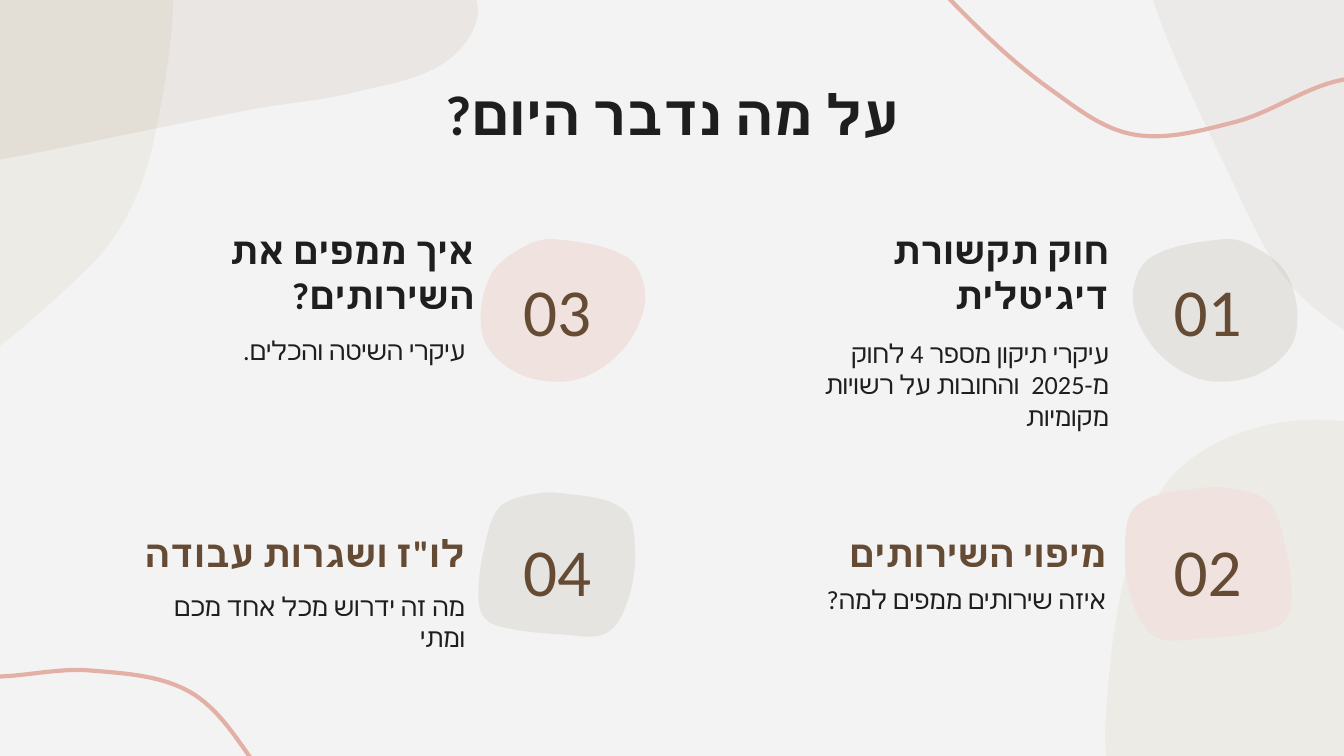
import math
from dataclasses import dataclass
from typing import Optional

from lxml import etree
from pptx import Presentation
from pptx import util as u
from pptx.dml import color
from pptx.enum import text
from pptx.oxml import ns

Point = tuple[float, float]
CM_PER_INCH = 2.54


@dataclass(frozen=True)
class Theme:
    background: str = "F3F3F3"
    ink: str = "1E1E1E"
    brown: str = "664B34"
    blush: str = "EFE2DF"
    stone: str = "E5E4E0"
    sand: str = "E7E2D6"
    clay: str = "AC9078"
    olive: str = "887C62"
    rose: str = "E2B0A6"
    font: str = "Calibri"
    title_size: int = 30
    number_size: int = 36
    heading_size: int = 20
    detail_size: int = 14
    line_width: float = 2.25


THEME = Theme()


@dataclass(frozen=True)
class Curve:
    anchors: list[Point]
    fill: Optional[str] = None
    opacity: int = 100


@dataclass(frozen=True)
class Label:
    wording: str
    left: float
    top: float
    width: float
    height: float
    size: int
    colour: str = THEME.ink
    bold: bool = False
    rtl: bool = True
    align: text.PP_ALIGN = text.PP_ALIGN.RIGHT
    anchor: text.MSO_ANCHOR = text.MSO_ANCHOR.TOP


@dataclass(frozen=True)
class Row:
    number_top: float
    heading_top: float
    heading_colour: str


@dataclass(frozen=True)
class Topic:
    row: Row
    number_left: float
    heading: str
    heading_left: float
    detail: str
    detail_left: float
    detail_top: float


def placed(anchors: list[Point], origin: Point, target: Point,
           turn: float = 0, mirror: bool = False, scale: float = 1) -> list[Point]:
    cosine, sine = math.cos(math.radians(turn)), math.sin(math.radians(turn))
    result = []
    for x, y in anchors:
        across = (x - origin[0]) * scale * (-1 if mirror else 1)
        down = (y - origin[1]) * scale
        result.append((target[0] + across * cosine - down * sine,
                       target[1] + across * sine + down * cosine))
    return result


def smooth_controls(anchors: list[Point], closed: bool) -> list[Point]:
    count = len(anchors)

    def neighbour(index: int) -> Point:
        return anchors[index % count if closed else max(0, min(index, count - 1))]

    def handle(index: int, reach: float) -> Point:
        (x, y), before, after = neighbour(index), neighbour(index - 1), neighbour(index + 1)
        span = math.dist(before, after)
        return (x + reach * (after[0] - before[0]) / span,
                y + reach * (after[1] - before[1]) / span)

    controls = []
    for index in range(count if closed else count - 1):
        end = neighbour(index + 1)
        reach = math.dist(neighbour(index), end) / 3
        controls += [handle(index, reach), handle(index + 1, -reach), end]
    return controls


CORNER_BLOB = [(8.64, 3.65), (9.64, 3.13), (11.11, 3.42), (13.58, 4.37), (15.32, 5.86),
               (15.78, 7.28), (14.33, 6.99), (13.41, 7.26), (10.89, 8.21), (9.84, 8.07),
               (8.44, 6.36), (8.23, 5.3)]
TOP_BAND = [(2.43, -0.8), (3.07, -0.74), (3.55, 0.02), (3.33, 0.45), (2.62, 0.69), (1.9, 0.81),
            (-0.72, 1.31), (-0.95, 1.23), (-1.31, 0.43), (-0.32, -0.2), (1.55, -0.6)]
SIDE_BLOB = [(10.96, -3.77), (13.79, -3.8), (14.74, -2.32), (15.52, -0.37), (14.61, 1.4),
             (12.34, 2.23), (10.5, 2.62), (9.73, 2.25), (9.25, 1.52), (8.42, -0.59),
             (8.51, -2.46)]
WAVE = [(6.49, -0.66), (7.17, 0.1), (7.81, 0.66), (8.43, 1), (9.18, 0.91), (10.1, 0.58),
        (12.44, 0.75), (14.45, 1.13), (15.11, -0.37)]
PEBBLE = [(9.1, 1.78), (9.32, 1.83), (9.58, 2.05), (9.64, 2.49), (9.41, 2.76), (9.04, 2.84),
          (8.74, 2.73), (8.51, 2.48), (8.43, 2.17), (8.57, 1.91)]
CUSHION = [(8.95, 3.63), (9.24, 3.65), (9.45, 3.75), (9.56, 4.05), (9.61, 4.43), (9.56, 4.62),
           (9.38, 4.7), (8.94, 4.75), (8.6, 4.74), (8.43, 4.49), (8.37, 4.09), (8.46, 3.76)]

CURVES = [
    Curve(CORNER_BLOB, THEME.sand, 46),
    Curve(placed(CORNER_BLOB, (11.87, 6.13), (-2.58, 0.84), turn=15.7, mirror=True),
          THEME.sand, 46),
    Curve(TOP_BAND, THEME.clay, 13),
    Curve(SIDE_BLOB, THEME.olive, 7),
    Curve(placed(WAVE, (10.9, 0.5), (-1.09, 4.82), turn=-161.1)),
    Curve(WAVE),
    Curve(placed(PEBBLE, (9.1, 1.78), (4.13, 1.78), mirror=True), THEME.blush),
    Curve(PEBBLE, THEME.olive, 13),
    Curve(CUSHION, THEME.blush),
    Curve(placed(CUSHION, (8.95, 3.63), (4.18, 3.67), mirror=True, scale=0.94), THEME.stone),
]

UPPER_ROW = Row(number_top=2.06, heading_top=1.54, heading_colour=THEME.ink)
LOWER_ROW = Row(number_top=3.99, heading_top=3.46, heading_colour=THEME.brown)
RIGHT_NUMBER, LEFT_NUMBER = 8.54, 3.7
TOPICS = [
    Topic(UPPER_ROW, RIGHT_NUMBER, "חוק תקשורת דיגיטלית", 5.69,
          "עיקרי תיקון מספר 4 לחוק מ-2025  והחובות על רשויות מקומיות", 5.69, 2.41),
    Topic(LOWER_ROW, RIGHT_NUMBER, "מיפוי השירותים", 5.67,
          "איזה שירותים ממפים למה?", 5.67, 4.24),
    Topic(UPPER_ROW, LEFT_NUMBER, "איך ממפים את השירותים?", 0.97,
          "עיקרי השיטה והכלים.", 0.9, 2.39),
    Topic(LOWER_ROW, LEFT_NUMBER, "לו\"ז ושגרות עבודה", 0.9,
          "מה זה ידרוש מכל אחד מכם ומתי", 0.9, 4.29),
]


def length(inches: float) -> u.Length:
    return u.Cm(inches * CM_PER_INCH)


def rgb(value: str) -> color.RGBColor:
    return color.RGBColor.from_string(value)


def apply(target, values: dict) -> None:
    for name, value in values.items():
        setattr(target, name, value)


def bend_segments(shape) -> None:
    segments = list(shape.element.iter(ns.qn("a:lnTo")))
    for index in range(0, len(segments), 3):
        bezier = etree.Element(ns.qn("a:cubicBezTo"))
        segments[index].addprevious(bezier)
        for segment in segments[index:index + 3]:
            bezier.append(segment[0])
            segment.getparent().remove(segment)


def draw_curve(slide, curve: Curve) -> None:
    closed = curve.fill is not None
    controls = smooth_controls(curve.anchors, closed)
    builder = slide.shapes.build_freeform(*map(length, curve.anchors[0]))
    builder.add_line_segments([(length(x), length(y)) for x, y in controls], close=closed)
    shape = builder.convert_to_shape()
    shape.shadow.inherit = False
    bend_segments(shape)
    if not closed:
        shape.fill.background()
        shape.line.color.rgb = rgb(THEME.rose)
        shape.line.width = u.Pt(THEME.line_width)
        return
    shape.line.fill.background()
    shape.fill.solid()
    shape.fill.fore_color.rgb = rgb(curve.fill)
    if curve.opacity < 100:
        fill = shape.element.spPr.find(ns.qn("a:solidFill"))
        etree.SubElement(fill[0], ns.qn("a:alpha"), val=str(curve.opacity * 1000))


def draw_label(slide, label: Label) -> None:
    box = slide.shapes.add_textbox(
        *map(length, (label.left, label.top, label.width, label.height)))
    inset = length(0.1)
    apply(box.text_frame, dict(word_wrap=True, vertical_anchor=label.anchor, margin_left=inset,
                               margin_right=inset, margin_top=inset, margin_bottom=inset))
    paragraph = box.text_frame.paragraphs[0]
    paragraph.alignment = label.align
    if label.rtl:
        paragraph._p.get_or_add_pPr().set("rtl", "1")
    run = paragraph.add_run()
    run.text = label.wording
    apply(run.font, dict(name=THEME.font, size=u.Pt(label.size), bold=label.bold))
    run.font.color.rgb = rgb(label.colour)
    etree.SubElement(run._r.get_or_add_rPr(), ns.qn("a:cs"), typeface=THEME.font)


def draw_topic(slide, topic: Topic, number: int) -> None:
    row = topic.row
    draw_label(slide, Label(topic.heading, topic.heading_left, row.heading_top, 2.66, 0.92,
                            THEME.heading_size, row.heading_colour, bold=True,
                            anchor=text.MSO_ANCHOR.BOTTOM))
    draw_label(slide, Label(topic.detail, topic.detail_left, topic.detail_top, 2.66, 0.67,
                            THEME.detail_size))
    draw_label(slide, Label(f"{number:02}", topic.number_left, row.number_top, 0.89, 0.49,
                            THEME.number_size, THEME.brown, rtl=False,
                            align=text.PP_ALIGN.CENTER, anchor=text.MSO_ANCHOR.MIDDLE))


def main() -> None:
    presentation = Presentation()
    apply(presentation, dict(slide_width=u.Cm(25.4), slide_height=u.Cm(14.29)))
    slide = presentation.slides.add_slide(presentation.slide_layouts[6])
    slide.background.fill.solid()
    slide.background.fill.fore_color.rgb = rgb(THEME.background)
    for curve in CURVES:
        draw_curve(slide, curve)
    draw_label(slide, Label("על מה נדבר היום?", 0.79, 0.48, 8.43, 0.72, THEME.title_size, bold=True,
                            align=text.PP_ALIGN.CENTER, anchor=text.MSO_ANCHOR.MIDDLE))
    for number, topic in enumerate(TOPICS, start=1):
        draw_topic(slide, topic, number)
    presentation.save("out.pptx")


if __name__ == "__main__":
    main()
